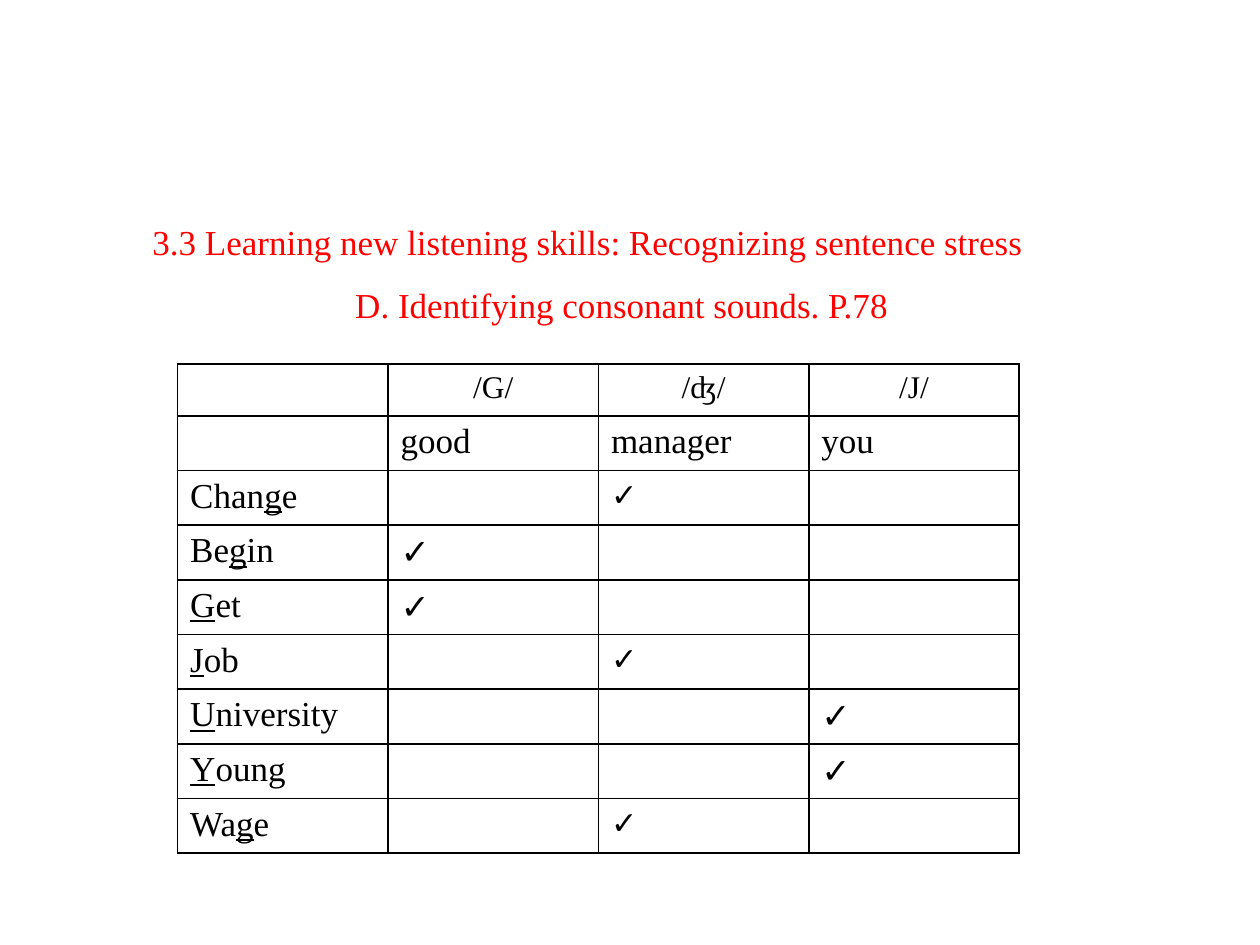
from lxml.etree import SubElement
from pptx import Presentation
from pptx.dml.color import RGBColor
from pptx.enum.text import PP_ALIGN as Align
from pptx.oxml.ns import qn
from pptx.util import Inches, Pt

SERIF = "Times New Roman"
TITLE_LINES = [
    ("3.3 Learning new listening skills: Recognizing sentence stress", 0),
    ("D. Identifying consonant sounds. P.78", 1.61),
]
SOUNDS = ["/G/", "/ʤ/", "/J/"]
EXAMPLES = ["good", "manager", "you"]
# Each word is split as before, underlined letter, after; then its sound column
WORDS = [
    (("Chan", "g", "e"), 2),
    (("Be", "g", "in"), 1),
    (("", "G", "et"), 1),
    (("", "J", "ob"), 2),
    (("", "U", "niversity"), 3),
    (("", "Y", "oung"), 3),
    (("Wa", "g", "e"), 2),
]
CHECK_SIZES = {1: 20, 2: 18, 3: 20}
COLUMN_WIDTH, ROW_HEIGHT = 1.67, 0.41


def color(value):
    return RGBColor.from_string(value)


def add_run(paragraph, text, size=20, font=SERIF, fill="000000", underline=False):
    run = paragraph.add_run()
    run.text = text
    run.font.size = Pt(size)
    run.font.name = font
    run.font.color.rgb = color(fill)
    if underline:
        run.font.underline = True


def add_title(slide):
    shape = slide.shapes.add_textbox(Inches(1.21), Inches(1.58), Inches(7.6), Inches(1))
    frame = shape.text_frame
    frame.word_wrap = True
    frame.margin_left = frame.margin_right = frame.margin_top = frame.margin_bottom = 0
    for index, (text, indent) in enumerate(TITLE_LINES):
        paragraph = frame.add_paragraph() if index else frame.paragraphs[0]
        paragraph.line_spacing = Pt(36)
        paragraph._p.get_or_add_pPr().set("marL", str(Inches(indent)))
        add_run(paragraph, text, fill="FF0000")


def style_cell(cell):
    """Give the cell thin black borders and a white fill."""
    properties = cell._tc.get_or_add_tcPr()
    for side in ("lnL", "lnR", "lnT", "lnB"):
        line = SubElement(properties, qn(f"a:{side}"), w=str(Pt(1)))
        fill = SubElement(line, qn("a:solidFill"))
        SubElement(fill, qn("a:srgbClr"), val="000000")
    cell.fill.solid()
    cell.fill.fore_color.rgb = color("FFFFFF")


def add_grid(slide, row_count, column_count):
    table = slide.shapes.add_table(
        row_count, column_count, Inches(1.41), Inches(2.89),
        Inches(COLUMN_WIDTH * column_count), Inches(ROW_HEIGHT * row_count)).table
    table.first_row = table.horz_banding = False
    for column in table.columns:
        column.width = Inches(COLUMN_WIDTH)
    for row in table.rows:
        row.height = Inches(ROW_HEIGHT)
    for cell in table.iter_cells():
        style_cell(cell)
    return table


def cell_paragraph(table, row, column):
    return table.cell(row, column).text_frame.paragraphs[0]


def add_sound_table(slide):
    table = add_grid(slide, len(WORDS) + 2, len(SOUNDS) + 1)
    for column, (sound, example) in enumerate(zip(SOUNDS, EXAMPLES), start=1):
        heading = cell_paragraph(table, 0, column)
        heading.alignment = Align.CENTER
        add_run(heading, sound, size=18)
        add_run(cell_paragraph(table, 1, column), example)
    for row, (parts, column) in enumerate(WORDS, start=2):
        word = cell_paragraph(table, row, 0)
        for index, part in enumerate(parts):
            if part:
                add_run(word, part, underline=index == 1)
        add_run(cell_paragraph(table, row, column), "✓",
                size=CHECK_SIZES[column], font="Calibri")


def main():
    presentation = Presentation()
    presentation.slide_width = Inches(10)
    presentation.slide_height = Inches(7.5)
    slide = presentation.slides.add_slide(presentation.slide_layouts[6])
    add_title(slide)
    add_sound_table(slide)
    presentation.save("out.pptx")


if __name__ == "__main__":
    main()
